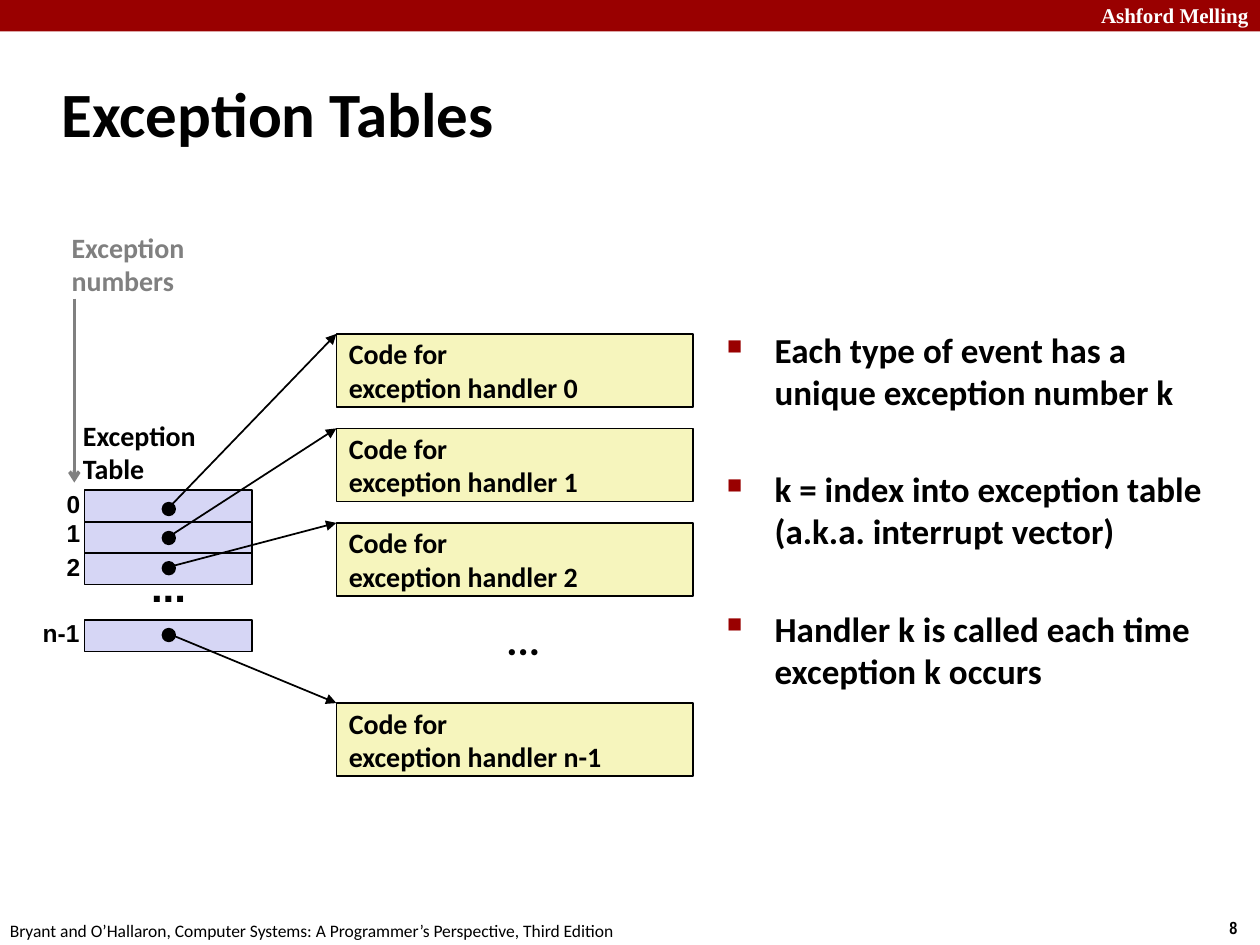
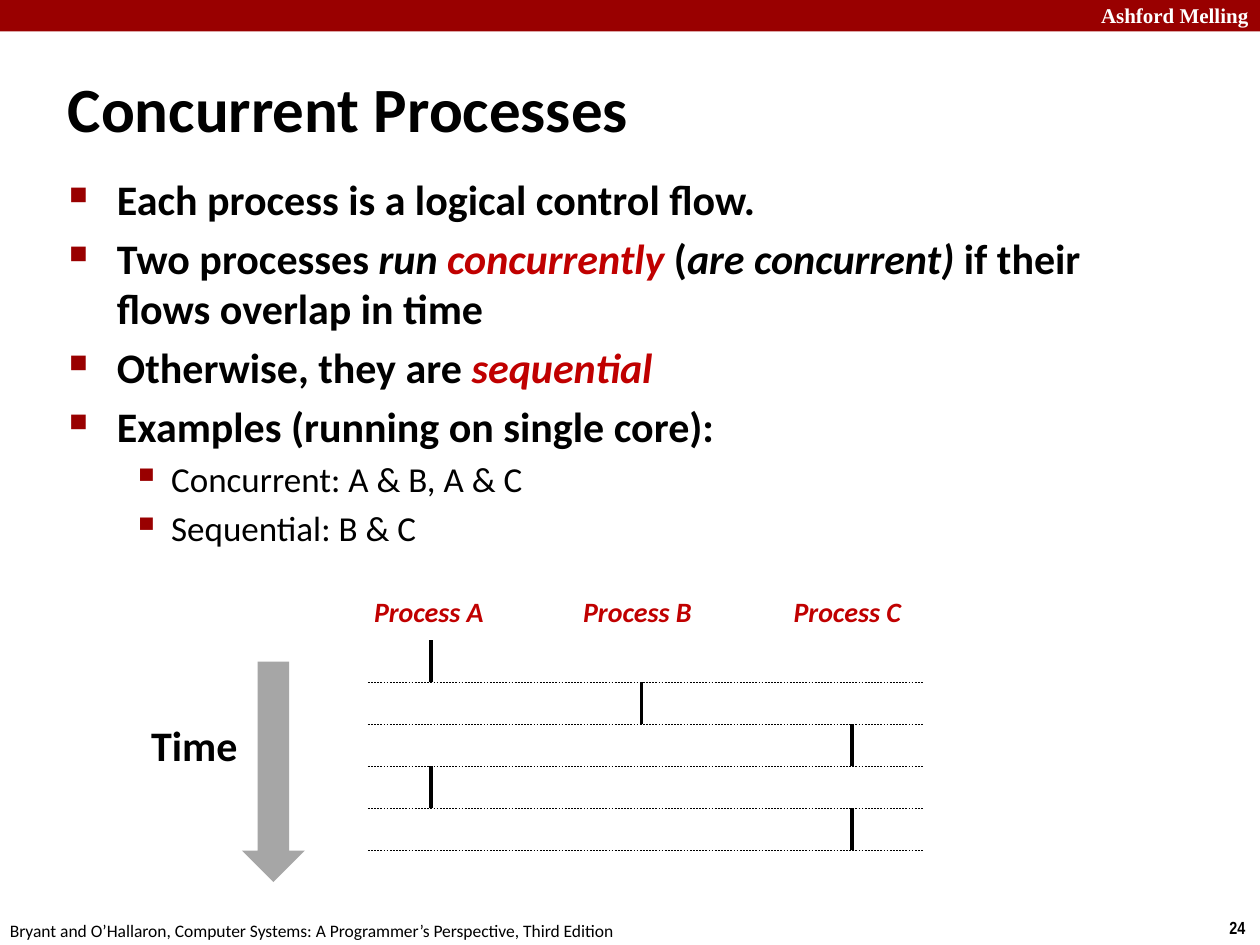
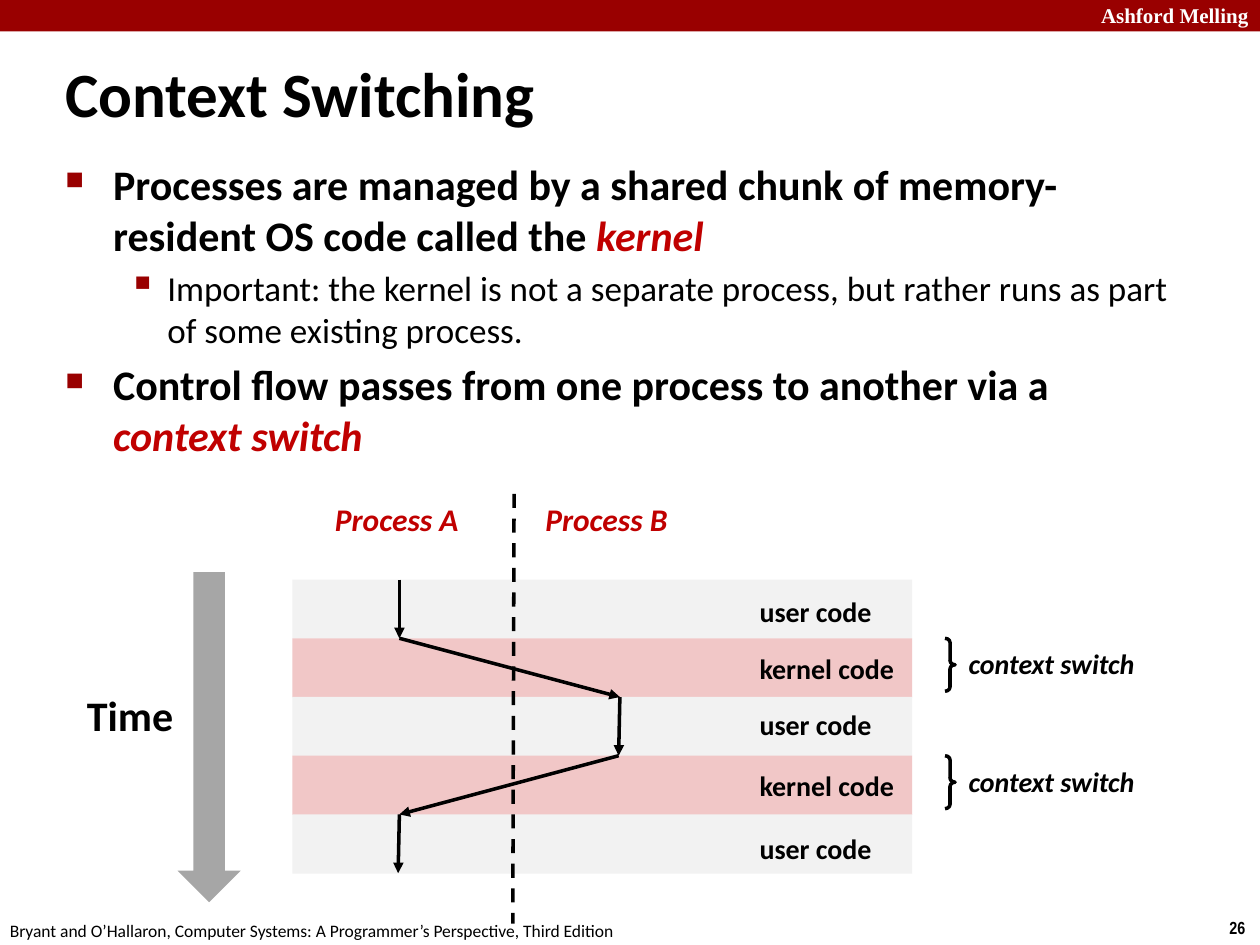
from lxml import etree
from pptx import Presentation
from pptx import util as u
from pptx.dml.color import RGBColor
from pptx.enum import dml, shapes, text
from pptx.oxml.ns import qn

COLORS = {
    "band": "990000", "accent": "C00000", "black": "000000", "white": "FFFFFF",
    "gray": "808080", "time": "A6A6A6", "entry": "D6D6F5", "handler": "F6F5BD",
    "user": "F2F2F2", "kernel": "F1C7C7",
}
# Per outline level: bullet, its size in %, left indent, hanging indent
LEVELS = [("■", 60, 0.38, 0.38), ("▪", 110, 0.81, 0.31)]
EMPHASIS = {"color": "accent", "italic": True}
ITALIC = {"italic": True}
SHAPE = shapes.MSO_SHAPE


def rgb(name):
    return RGBColor.from_string(COLORS[name])


# Text
def add_runs(paragraph, runs, size=16, font="Calibri", color="black",
             bold=True, italic=False):
    """Runs are a string or a list of (words, format changes)."""
    base = dict(size=size, font=font, color=color, bold=bold, italic=italic)
    for words, changes in [(runs, {})] if isinstance(runs, str) else runs:
        look = {**base, **changes}
        for i, line in enumerate(words.split("\n")):
            if i:
                paragraph.add_line_break()
            run = paragraph.add_run()
            run.text = line
            run.font.name = look["font"]
            run.font.size = u.Pt(look["size"])
            run.font.bold = look["bold"]
            run.font.italic = look["italic"]
            run.font.color.rgb = rgb(look["color"])


def fill_frame(frame, paragraphs, middle=False, right=0, **look):
    frame.word_wrap = True
    frame.margin_right = u.Inches(right)
    anchor = text.MSO_ANCHOR
    frame.vertical_anchor = anchor.MIDDLE if middle else anchor.TOP
    for i, runs in enumerate(paragraphs):
        paragraph = frame.add_paragraph() if i else frame.paragraphs[0]
        paragraph.alignment = text.PP_ALIGN.LEFT
        add_runs(paragraph, runs, **look)


def add_text(slide, box, *paragraphs, **look):
    frame = slide.shapes.add_textbox(*map(u.Inches, box)).text_frame
    fill_frame(frame, paragraphs, **look)
    return frame


def add_bullets(slide, box, items, sizes=(24, 20), gap=None):
    """Items are (level, runs); gap is the space above later items."""
    frame = add_text(slide, box, *[[] for _ in items], right=0.1)
    for i, (paragraph, (level, runs)) in enumerate(zip(frame.paragraphs, items)):
        size = sizes[level]
        mark, percent, left, hanging = LEVELS[level]
        paragraph.level = level
        paragraph.space_before = u.Pt(gap if gap and i else size * 0.2)
        props = paragraph._p.get_or_add_pPr()
        props.set("marL", str(u.Inches(left)))
        props.set("indent", str(-u.Inches(hanging)))
        tint = etree.SubElement(props, qn("a:buClr"))
        etree.SubElement(tint, qn("a:srgbClr"), val=COLORS["band"])
        etree.SubElement(props, qn("a:buSzPct"), val=str(percent * 1000))
        etree.SubElement(props, qn("a:buChar"), char=mark)
        add_runs(paragraph, runs, size=size, bold=level == 0)


# Shapes and lines
def add_shape(slide, kind, box, fill=None, line=None):
    shape = slide.shapes.add_shape(kind, *map(u.Inches, box))
    shape.shadow.inherit = False
    if fill:
        shape.fill.solid()
        shape.fill.fore_color.rgb = rgb(fill)
    else:
        shape.fill.background()
    if line:
        shape.line.color.rgb = rgb("black")
        shape.line.width = u.Pt(line)
    else:
        shape.line.fill.background()
    return shape


def add_line(slide, start, end, width=2, color="black", dash=False, head=None):
    line = slide.shapes.add_connector(
        shapes.MSO_CONNECTOR.STRAIGHT, *map(u.Inches, (*start, *end)))
    line.line.color.rgb = rgb(color)
    line.line.width = u.Pt(width)
    if dash:
        line.line.dash_style = dml.MSO_LINE.DASH
    if head:
        etree.SubElement(line.line._get_or_add_ln(), qn("a:tailEnd"), type=head)
    etree.SubElement(line._element.spPr, qn("a:effectLst"))


# Frame shared by all slides
def new_slide(deck, title, title_box, number):
    slide = deck.slides.add_slide(deck.slide_layouts[6])
    add_shape(slide, SHAPE.RECTANGLE, (0, 0, 10, 0.25), "band")
    add_text(slide, (8.64, -0.03, 1.36, 0.3), "Ashford Melling",
             size=12, font="Times New Roman", color="white")
    add_text(slide, (9.66, 7.23, 0.34, 0.27), str(number),
             size=10, font="Arial Narrow")
    add_text(slide, (-0.02, 7.25, 5.08, 0.27),
             "Bryant and O’Hallaron, Computer Systems: "
             "A Programmer’s Perspective, Third Edition", size=10, bold=False)
    add_text(slide, title_box, title, size=36, middle=True)
    return slide


def time_arrow(slide, left, top, height, label_top):
    add_text(slide, (left, label_top, 0.89, 0.5), "Time", size=24)
    add_shape(slide, SHAPE.DOWN_ARROW, (left + 0.82, top, 0.5, height), "time")


# Exception table with its handlers
def exception_diagram(slide, left, top):
    table_left, handler_left = left + 0.2, left + 2.2
    dot_x = table_left + 0.67
    # index, its label's left and width, then tops of label, entry, dot, handler
    entries = [
        ("0", 0.43, 0.31, 2.05, 2.11, 2.21, 0.87),
        ("1", 0.43, 0.31, 2.28, 2.36, 2.44, 1.62),
        ("2", 0.43, 0.31, 2.55, 2.61, 2.68, 2.37),
        ("n-1", 0.24, 0.49, 3.08, 3.14, 3.21, 3.80),
    ]
    for index, x, width, label, entry, dot, handler in entries:
        add_shape(slide, SHAPE.RECTANGLE,
                  (table_left, top + entry, 1.33, 0.25), "entry", line=1)
        add_text(slide, (left - 0.47 + x, top + label, width, 0.33), index,
                 size=14, font="Arial", middle=True)
        code = add_shape(slide, SHAPE.RECTANGLE,
                         (handler_left, top + handler, 2.83, 0.58),
                         "handler", line=0.75)
        fill_frame(code.text_frame,
                   ["Code for", f"exception handler {index}"], middle=True)
    for *_, dot, handler in entries:
        add_shape(slide, SHAPE.OVAL,
                  (dot_x - 0.05, top + dot, 0.1, 0.1), "black", line=1)
        add_line(slide, (dot_x, top + dot + 0.04), (handler_left, top + handler),
                 width=1, head="triangle")

    # Ellipses for the entries left out
    add_text(slide, (left + 0.63, top + 2.62, 0.48, 0.5), "...",
             size=24, font="Arial", middle=True)
    add_text(slide, (left + 3.45, top + 3.04, 0.48, 0.5), "...",
             size=24, middle=True)

    # Captions
    add_text(slide, (left + 0.09, top + 1.49, 1.11, 0.64), "Exception", "Table")
    add_text(slide, (left, top, 1.16, 0.64), "Exception", "numbers", color="gray")
    add_line(slide, (left + 0.12, top + 0.59), (left + 0.12, top + 2.05),
             color="gray", head="arrow")


# Interleaved processes over time
def interleaving_diagram(slide, left, top):
    column, step = 1.67, 1 / 3
    first_x, first_y = left + 0.5, top + 0.41
    for i, (name, shift) in enumerate(zip("ABC", (0, -0.01, -0.01))):
        add_text(slide, (left - 0.05 + i * column + shift, top, 1.09, 0.37),
                 f"Process {name}", color="accent", italic=True)
    for i, name in enumerate("ABCAC"):
        x, y = first_x + "ABC".index(name) * column, first_y + i * step
        add_line(slide, (x, y), (x, y + step))
        add_line(slide, (left, y + step), (left + 4.41, y + step),
                 width=0.25, dash=True)


# Switches between two processes
def switching_diagram(slide, left, top):
    step, width = 0.466, 4.92
    bands_top = top + 0.68
    modes = ["user", "kernel", "user", "kernel", "user"]
    label_tops = [0.75, 1.2, 1.65, 2.13, 2.63]
    for i, (mode, label_top) in enumerate(zip(modes, label_tops)):
        y = bands_top + i * step
        add_shape(slide, SHAPE.RECTANGLE, (left, y, width, 0.47), mode)
        add_text(slide, (left + 3.61, top + label_top, 1.28, 0.37), f"{mode} code")
        if mode == "kernel":
            brace = add_shape(slide, SHAPE.RIGHT_BRACE,
                              (left + 5.18, y, 0.08, 0.42), line=2)
            brace.adjustments[0] = 0.417
            add_text(slide, (left + 5.27, y + 0.02, 1.54, 0.37),
                     "context switch", italic=True)

    # Process columns and their divider
    for name, x in (("A", 0.24), ("B", 1.91)):
        add_text(slide, (left + x, top, 1.2, 0.4), f"Process {name}",
                 size=18, color="accent", italic=True)
    add_line(slide, (left + 1.76, top), (left + 1.75, top + 3.41), dash=True)

    # Control flow, one arrow a band
    flow = [(left + x, bands_top + i * step)
            for i, x in enumerate((0.85, 0.85, 2.6, 2.59, 0.85, 0.84))]
    for start, end in zip(flow, flow[1:]):
        add_line(slide, start, end, head="triangle")


def main():
    deck = Presentation()
    deck.slide_width, deck.slide_height = u.Inches(10), u.Inches(7.5)

    tables = new_slide(deck, "Exception Tables", (0.39, 0.48, 8.3, 0.83), 8)
    exception_diagram(tables, 0.47, 1.78)
    add_bullets(tables, (5.67, 2.56, 4.17, 3.52), [
        (0, "Each type of event has a\nunique exception number k"),
        (0, "k = index into exception table\n(a.k.a. interrupt vector)"),
        (0, "Handler k is called each time\nexception k occurs"),
    ], sizes=(20,), gap=31.5)

    concurrent = new_slide(deck, "Concurrent Processes",
                           (0.44, 0.54, 6.64, 0.63), 24)
    add_bullets(concurrent, (0.45, 1.33, 8.64, 2.83), [
        (0, "Each process is a logical control flow."),
        (0, [("Two processes ", {}), ("run ", ITALIC), ("concurrently", EMPHASIS),
             (" (", {}), ("are concurrent)", ITALIC),
             (" if their flows overlap in time", {})]),
        (0, [("Otherwise, they are ", {}), ("sequential", EMPHASIS)]),
        (0, "Examples (running on single core):"),
        (1, "Concurrent: A & B, A & C"),
        (1, "Sequential: B & C"),
    ])
    interleaving_diagram(concurrent, 2.92, 4.67)
    time_arrow(concurrent, 1.1, 5.25, 1.75, label_top=5.66)

    switching = new_slide(deck, "Context Switching", (0.42, 0.42, 6.39, 0.63), 26)
    add_bullets(switching, (0.42, 1.21, 9.07, 2.79), [
        (0, [("Processes are managed by a shared chunk of memory-resident "
              "OS code called the ", {}), ("kernel", EMPHASIS)]),
        (1, "Important: the kernel is not a separate process, "
            "but rather runs as part of some existing process."),
        (0, [("Control flow passes from one process to another via a ", {}),
             ("context switch", EMPHASIS)]),
    ])
    switching_diagram(switching, 2.32, 3.92)
    time_arrow(switching, 0.59, 4.54, 2.62, label_top=5.42)

    deck.save("out.pptx")


if __name__ == "__main__":
    main()
